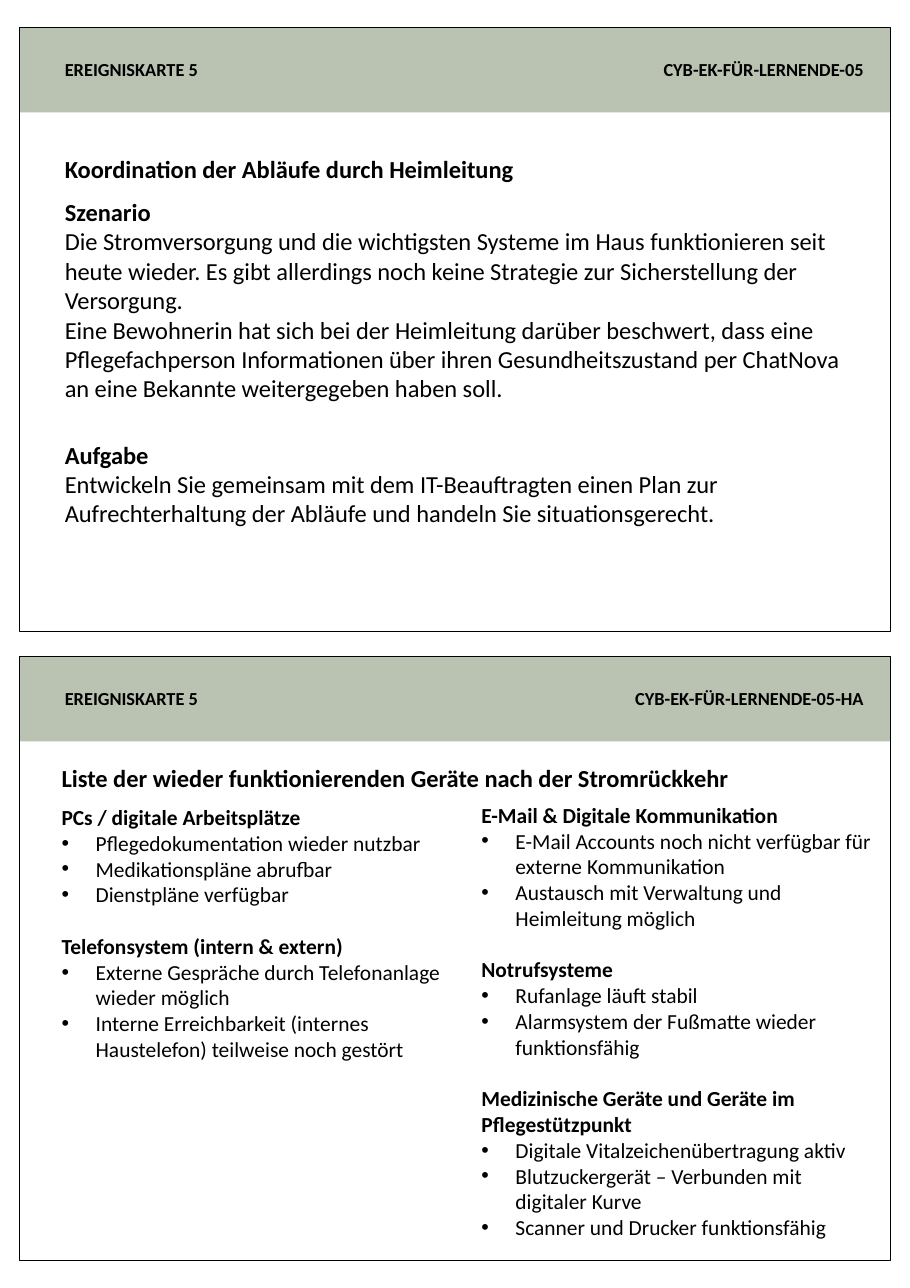
from dataclasses import dataclass

from lxml.etree import SubElement
from pptx import Presentation
from pptx.dml.color import RGBColor
from pptx.enum.shapes import MSO_SHAPE
from pptx.enum.text import PP_ALIGN
from pptx.oxml.ns import qn
from pptx.util import Inches, Pt


@dataclass(frozen=True)
class Theme:
    font: str = "Calibri"
    ink: RGBColor = RGBColor(0, 0, 0)
    band: RGBColor = RGBColor(0xBA, 0xC3, 0xB1)
    label: int = 12
    lists: int = 14
    body: int = 16
    border: float = 0.75
    group_gap: int = 17
    indent: float = 0.31


@dataclass(frozen=True)
class Box:
    left: float
    top: float
    width: float
    height: float

    def inner(self, left, top, width, height):
        return Box(self.left + left, self.top + top, width, height)

    def place(self):
        column, row = PAGE_WIDTH / 100, PAGE_HEIGHT / 100
        return (round(self.left * column), round(self.top * row),
                round(self.width * column), round(self.height * row))


THEME = Theme()
PAGE_WIDTH, PAGE_HEIGHT = Inches(8.26), Inches(11.69)
CARD_LEFT, CARD_WIDTH, CARD_HEIGHT = 2.18, 95.64, 46.88
CARD_TOPS = (2.14, 50.98)
TEXT_WIDTH = 84.14

SCENARIO = [
    "Die Stromversorgung und die wichtigsten Systeme im Haus funktionieren seit heute wieder. "
    "Es gibt allerdings noch keine Strategie zur Sicherstellung der Versorgung.",
    "Eine Bewohnerin hat sich bei der Heimleitung darüber beschwert, dass eine Pflegefachperson "
    "Informationen über ihren Gesundheitszustand per ChatNova an eine Bekannte weitergegeben haben soll.",
]
TASK = [
    "Entwickeln Sie gemeinsam mit dem IT-Beauftragten einen Plan zur Aufrechterhaltung "
    "der Abläufe und handeln Sie situationsgerecht.",
]
OFFICE_DEVICES = {
    "PCs / digitale Arbeitsplätze": [
        "Pflegedokumentation wieder nutzbar",
        "Medikationspläne abrufbar",
        "Dienstpläne verfügbar",
    ],
    "Telefonsystem (intern & extern)": [
        "Externe Gespräche durch Telefonanlage wieder möglich",
        "Interne Erreichbarkeit (internes Haustelefon) teilweise noch gestört",
    ],
}
CARE_DEVICES = {
    "E-Mail & Digitale Kommunikation": [
        "E-Mail Accounts noch nicht verfügbar für externe Kommunikation",
        "Austausch mit Verwaltung und Heimleitung möglich",
    ],
    "Notrufsysteme": [
        "Rufanlage läuft stabil",
        "Alarmsystem der Fußmatte wieder funktionsfähig",
    ],
    "Medizinische Geräte und Geräte im Pflegestützpunkt": [
        "Digitale Vitalzeichenübertragung aktiv",
        "Blutzuckergerät – Verbunden mit digitaler Kurve",
        "Scanner und Drucker funktionsfähig",
    ],
}


def add_frame(page, box):
    frame = page.shapes.add_textbox(*box.place()).text_frame
    frame.word_wrap = True
    return frame


def add_bullet(para):
    properties = para._p.get_or_add_pPr()
    indent = Inches(THEME.indent)
    properties.set("marL", str(indent))
    properties.set("indent", str(-indent))
    SubElement(properties, qn("a:buFont"), typeface="Arial")
    SubElement(properties, qn("a:buChar"), char="•")


def add_text(frame, text, size=THEME.body, bold=False, align=PP_ALIGN.LEFT, bullet=False, gap=0):
    first = not frame.paragraphs[0].runs
    para = frame.paragraphs[0] if first else frame.add_paragraph()
    para.alignment = align
    if gap and not first:
        para.space_before = Pt(gap)
    if bullet:
        add_bullet(para)
    span = para.add_run()
    span.text = text
    span.font.name = THEME.font
    span.font.size = Pt(size)
    span.font.bold = bold
    span.font.color.rgb = THEME.ink


def add_rectangle(page, box, fill=None, line=None):
    shape = page.shapes.add_shape(MSO_SHAPE.RECTANGLE, *box.place())
    shape.shadow.inherit = False
    if fill is None:
        shape.fill.background()
    else:
        shape.fill.solid()
        shape.fill.fore_color.rgb = fill
    if line is None:
        shape.line.fill.background()
    else:
        shape.line.color.rgb = line
        shape.line.width = Pt(THEME.border)


def add_card(page, card, code):
    add_rectangle(page, card.inner(0, 0, card.width, 6.59), fill=THEME.band)
    add_rectangle(page, card, line=THEME.ink)
    add_text(add_frame(page, card.inner(53.87, 1.97, 40.07, 2.57)), code,
             size=THEME.label, bold=True, align=PP_ALIGN.RIGHT)
    add_text(add_frame(page, card.inner(3.75, 1.97, TEXT_WIDTH, 2.57)), "EREIGNISKARTE 5",
             size=THEME.label, bold=True)


def add_groups(page, box, groups, size=THEME.lists, bullet=True):
    frame = add_frame(page, box)
    for heading, lines in groups.items():
        add_text(frame, heading, size=size, bold=True, gap=THEME.group_gap)
        for line in lines:
            add_text(frame, line, size=size, bullet=bullet)


def add_event_card(page, card):
    add_card(page, card, "CYB-EK-FÜR-LERNENDE-05")
    add_text(add_frame(page, card.inner(3.75, 9.41, TEXT_WIDTH, 3.17)),
             "Koordination der Abläufe durch Heimleitung", bold=True)
    add_groups(page, card.inner(3.75, 12.75, 87.77, 17.02), {"Szenario": SCENARIO},
               size=THEME.body, bullet=False)
    add_groups(page, card.inner(3.75, 31.57, TEXT_WIDTH, 10.09), {"Aufgabe": TASK},
               size=THEME.body, bullet=False)


def add_device_card(page, card):
    add_card(page, card, "CYB-EK-FÜR-LERNENDE-05-HA")
    add_text(add_frame(page, card.inner(3.39, 7.87, TEXT_WIDTH, 3.17)),
             "Liste der wieder funktionierenden Geräte nach der Stromrückkehr", bold=True)
    add_groups(page, card.inner(3.39, 11.04, 44.07, 24.72), OFFICE_DEVICES)
    add_groups(page, card.inner(49.52, 10.86, 45.76, 36.87), CARE_DEVICES)


def main():
    deck = Presentation()
    deck.slide_width, deck.slide_height = PAGE_WIDTH, PAGE_HEIGHT
    page = deck.slides.add_slide(deck.slide_layouts[6])
    for add_content, top in zip((add_event_card, add_device_card), CARD_TOPS):
        add_content(page, Box(CARD_LEFT, top, CARD_WIDTH, CARD_HEIGHT))
    deck.save("out.pptx")


if __name__ == "__main__":
    main()
